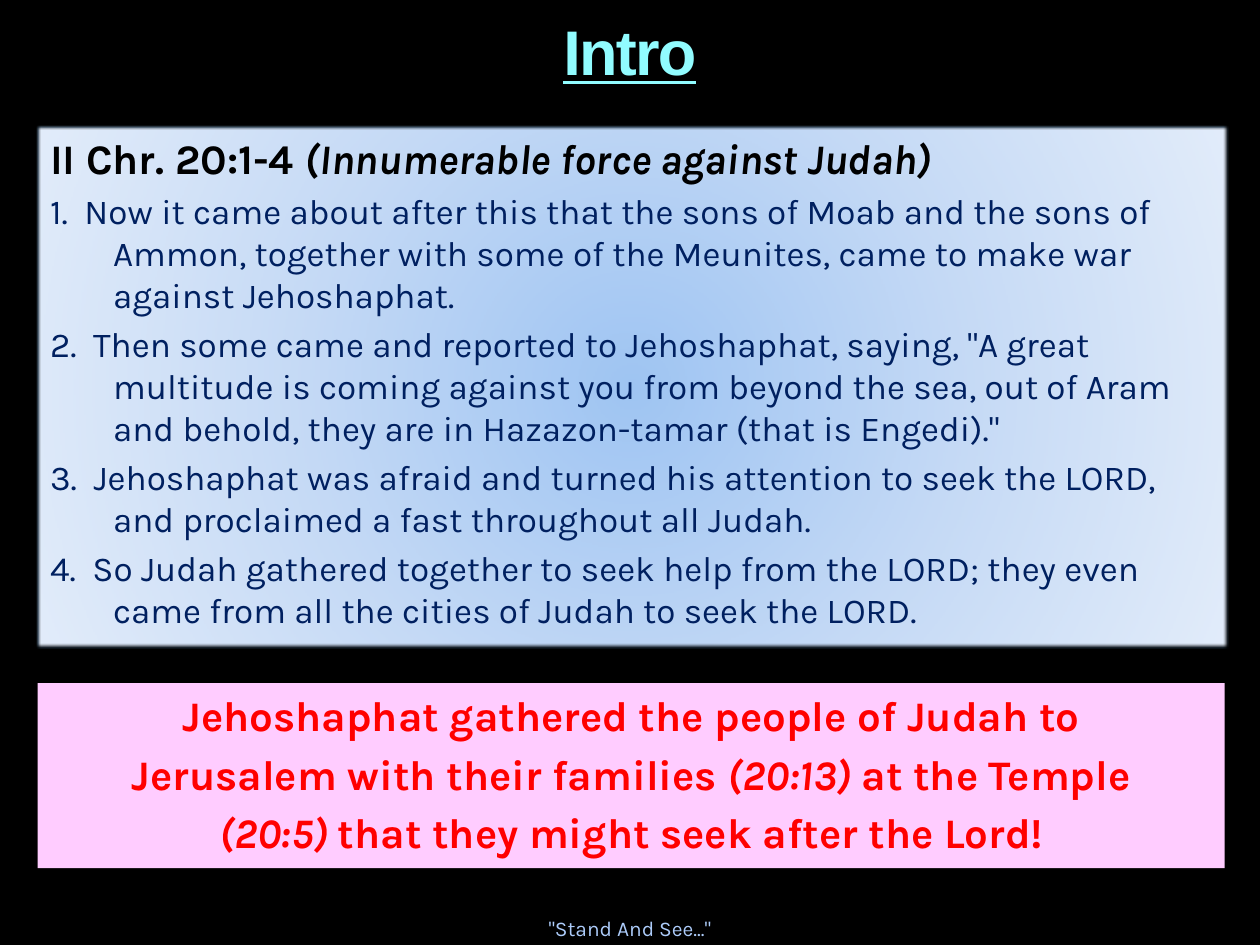
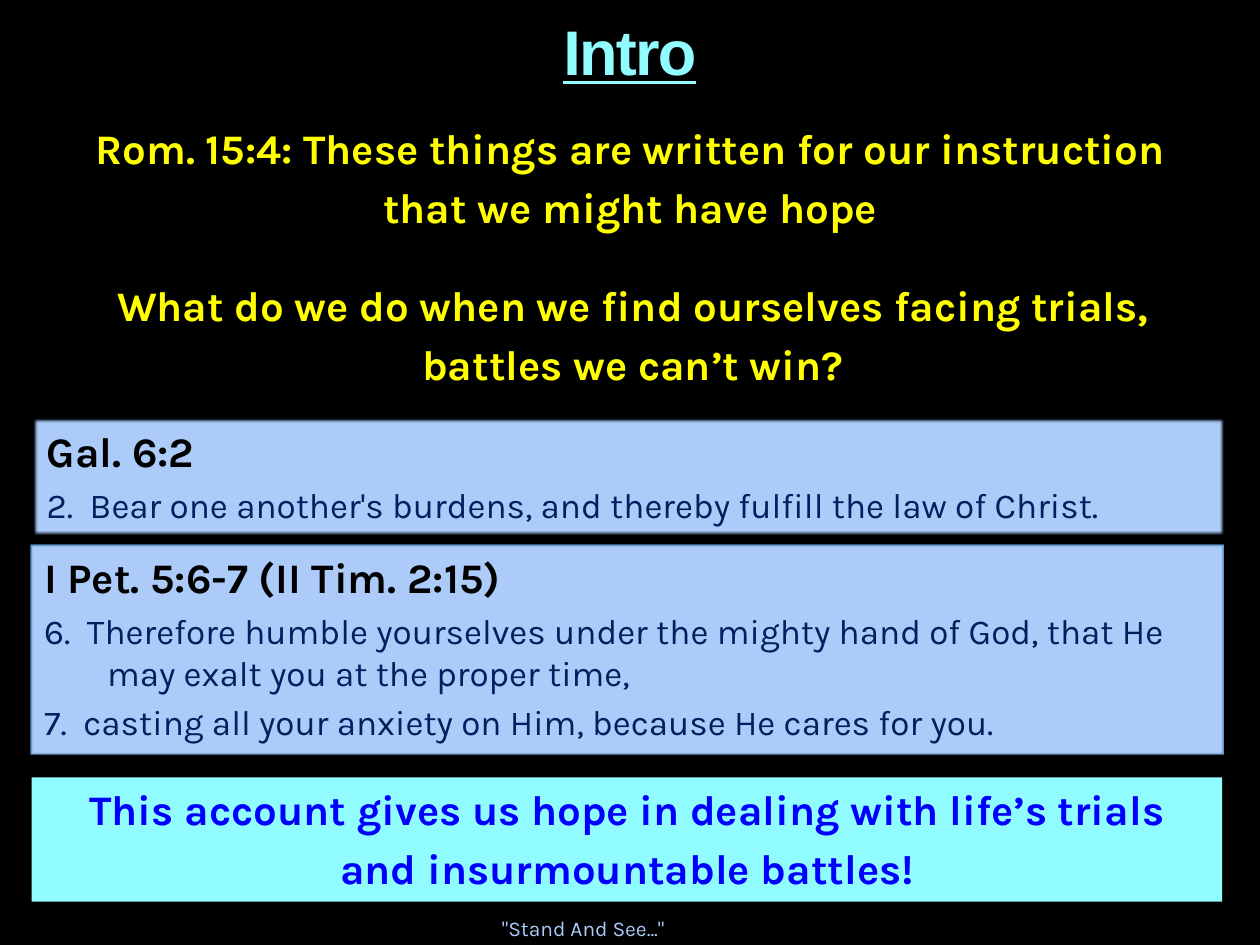
from dataclasses import dataclass

from lxml.etree import SubElement
from pptx import Presentation
from pptx.dml.color import RGBColor
from pptx.enum.shapes import MSO_SHAPE as ShapeKind
from pptx.enum.text import MSO_ANCHOR as Anchor
from pptx.enum.text import MSO_AUTO_SIZE as AutoSize
from pptx.enum.text import PP_ALIGN as Align
from pptx.oxml import parse_xml
from pptx.oxml.ns import nsdecls, qn
from pptx.slide import Slide
from pptx.util import Cm, Pt

BODY_FONT = "Karla"
TITLE_FONT = "Arial"
BLACK = "000000"
NAVY = "002060"
YELLOW = "FFFF00"
RED = "FF0000"
BLUE = "0000FF"
PINK = "FFCCFF"
AQUA = "91FCFF"
PERIWINKLE = "ACCBF9"
PANEL_LINE = "629DD1"
GLOW_STOPS = ((0, "9EC4F2"), (50, "C4D9F5"), (100, "E2ECFA"))
HANGING = Cm(1.27)
SOFT_EDGE = Pt(1)


@dataclass(frozen=True)
class Box:
    left: float
    top: float
    width: float
    height: float

    def lengths(self) -> tuple:
        return Cm(self.left), Cm(self.top), Cm(self.width), Cm(self.height)


@dataclass(frozen=True)
class Span:
    text: str
    italic: bool = False


@dataclass(frozen=True)
class Scripture:
    box: Box
    heading: tuple[Span, ...]
    verses: tuple[str, ...]
    glowing: bool = False


@dataclass(frozen=True)
class Statement:
    box: Box
    lines: tuple[tuple[Span, ...], ...]
    text_color: str
    fill: str | None = None


def rgb(color: str) -> RGBColor:
    return RGBColor.from_string(color)


def style_run(run, size: float, color: str, bold: bool = False,
              font: str = BODY_FONT) -> None:
    run.font.name = font
    run.font.size = Pt(size)
    run.font.bold = bold
    run.font.color.rgb = rgb(color)


def add_label(slide: Slide, box: Box, text: str, anchor: Anchor):
    text_frame = slide.shapes.add_textbox(*box.lengths()).text_frame
    text_frame.text = text
    text_frame.word_wrap = True
    text_frame.vertical_anchor = anchor
    paragraph = text_frame.paragraphs[0]
    paragraph.alignment = Align.CENTER
    return paragraph.runs[0]


def add_title(slide: Slide, text: str) -> None:
    run = add_label(slide, Box(0, 0, 25.4, 1.9), text, Anchor.BOTTOM)
    style_run(run, 36, AQUA, True, TITLE_FONT)
    run.font.underline = True
    run.font._element.set("spc", "-100")


def add_footer(slide: Slide, left: float) -> None:
    run = add_label(slide, Box(left, 18.42, 9.96, 0.6),
                    '"Stand And See..."', Anchor.MIDDLE)
    style_run(run, 12, PERIWINKLE)


def add_rectangle(slide: Slide, box: Box, fill: str):
    shape = slide.shapes.add_shape(ShapeKind.RECTANGLE, *box.lengths())
    shape.shadow.inherit = False
    shape.fill.solid()
    shape.fill.fore_color.rgb = rgb(fill)
    shape.line.fill.background()
    return shape


def prepare_text(shape):
    text_frame = shape.text_frame
    text_frame.word_wrap = True
    text_frame.vertical_anchor = Anchor.TOP
    text_frame.auto_size = AutoSize.SHAPE_TO_FIT_TEXT
    return text_frame


def fill_paragraph(text_frame, index: int, spans: tuple[Span, ...], size: float,
                   color: str, bold: bool, alignment: Align) -> None:
    paragraph = text_frame.add_paragraph() if index else text_frame.paragraphs[0]
    paragraph.alignment = alignment
    paragraph.space_before = Pt(size * 0.2)
    properties = paragraph._p.get_or_add_pPr()
    properties.set("marL", str(HANGING))
    properties.set("indent", str(-HANGING))
    for span in spans:
        run = paragraph.add_run()
        run.text = span.text
        style_run(run, size, color, bold)
        run.font.italic = span.italic


def soften_edges(shape) -> None:
    effects = shape._element.spPr.find(qn("a:effectLst"))
    SubElement(effects, qn("a:softEdge"), rad=str(SOFT_EDGE))


def apply_glow(shape) -> None:
    stops = "".join(
        f'<a:gs pos="{position * 1000}"><a:srgbClr val="{color}"/></a:gs>'
        for position, color in GLOW_STOPS
    )
    gradient = parse_xml(
        f'<a:gradFill {nsdecls("a")} rotWithShape="1"><a:gsLst>{stops}</a:gsLst>'
        '<a:path path="circle"><a:fillToRect l="50000" t="50000" r="50000" '
        'b="50000"/></a:path></a:gradFill>'
    )
    properties = shape._element.spPr
    properties.replace(properties.find(qn("a:solidFill")), gradient)


def add_scripture(slide: Slide, scripture: Scripture) -> None:
    shape = add_rectangle(slide, scripture.box, PERIWINKLE)
    shape.line.color.rgb = rgb(PANEL_LINE)
    shape.line.width = Pt(1)
    soften_edges(shape)
    if scripture.glowing:
        apply_glow(shape)
    text_frame = prepare_text(shape)
    fill_paragraph(text_frame, 0, scripture.heading, 24, BLACK, True, Align.LEFT)
    for index, verse in enumerate(scripture.verses, 1):
        fill_paragraph(text_frame, index, (Span(verse),), 20, NAVY, False, Align.LEFT)


def add_statement(slide: Slide, statement: Statement) -> None:
    if statement.fill:
        shape = add_rectangle(slide, statement.box, statement.fill)
    else:
        shape = slide.shapes.add_textbox(*statement.box.lengths())
    text_frame = prepare_text(shape)
    for index, spans in enumerate(statement.lines):
        fill_paragraph(text_frame, index, spans, 24, statement.text_color, True,
                       Align.CENTER)


def add_intro_slide(presentation, footer_left: float,
                    scriptures: tuple[Scripture, ...],
                    statements: tuple[Statement, ...]) -> None:
    slide = presentation.slides.add_slide(presentation.slide_layouts[6])
    slide.background.fill.solid()
    slide.background.fill.fore_color.rgb = rgb(BLACK)
    add_footer(slide, footer_left)
    add_title(slide, "Intro")
    for statement in statements:
        add_statement(slide, statement)
    for scripture in scriptures:
        add_scripture(slide, scripture)


JUDAH_THREATENED = Scripture(
    Box(0.76, 2.54, 24, 10.52),
    (Span("II Chr. 20:1-4 "), Span("(Innumerable force against Judah)", True)),
    (
        "1.  Now it came about after this that the sons of Moab and the sons of "
        "Ammon, together with some of the Meunites, came to make war against "
        "Jehoshaphat.",
        "2.  Then some came and reported to Jehoshaphat, saying, \"A great "
        "multitude is coming against you from beyond the sea, out of Aram and "
        "behold, they are in Hazazon-tamar (that is Engedi).\"",
        "3.  Jehoshaphat was afraid and turned his attention to seek the LORD, "
        "and proclaimed a fast throughout all Judah.",
        "4.  So Judah gathered together to seek help from the LORD; they even "
        "came from all the cities of Judah to seek the LORD.",
    ),
    glowing=True,
)
PEOPLE_GATHERED = Statement(
    Box(0.76, 13.77, 23.93, 3.73),
    (
        (Span("Jehoshaphat gathered the people of Judah to"),),
        (Span("Jerusalem with their families "), Span("(20:13) ", True),
         Span("at the Temple")),
        (Span("(20:5) ", True), Span("that they might seek after the Lord!")),
    ),
    RED,
    PINK,
)
BEAR_BURDENS = Scripture(
    Box(0.69, 8.46, 23.95, 2.31),
    (Span("Gal. 6:2"),),
    ("2.  Bear one another's burdens, and thereby fulfill the law of Christ.",),
)
CAST_ANXIETY = Scripture(
    Box(0.64, 11, 24, 4.19),
    (Span("I Pet. 5:6-7 (II Tim. 2:15)"),),
    (
        "6.  Therefore humble yourselves under the mighty hand of God, that He "
        "may exalt you at the proper time,",
        "7.  casting all your anxiety on Him, because He cares for you.",
    ),
)
HOPE_IN_TRIALS = Statement(
    Box(0.64, 15.67, 24, 2.51),
    (
        (Span("This account gives us hope in dealing with life’s trials"),),
        (Span("and insurmountable battles!"),),
    ),
    BLUE,
    AQUA,
)
WRITTEN_FOR_HOPE = Statement(
    Box(0.64, 2.34, 24.13, 2.51),
    (
        (Span("Rom. 15:4: These things are written for our instruction"),),
        (Span("that we might have hope"),),
    ),
    YELLOW,
)
FACING_TRIALS = Statement(
    Box(0.69, 5.51, 24.13, 2.51),
    (
        (Span("What do we do when we find ourselves facing trials,"),),
        (Span("battles we can’t win?"),),
    ),
    YELLOW,
)


def main() -> None:
    presentation = Presentation()
    presentation.slide_width = Cm(25.4)
    presentation.slide_height = Cm(19.05)
    add_intro_slide(presentation, 7.72, (JUDAH_THREATENED,), (PEOPLE_GATHERED,))
    add_intro_slide(presentation, 6.78, (BEAR_BURDENS, CAST_ANXIETY),
                    (HOPE_IN_TRIALS, WRITTEN_FOR_HOPE, FACING_TRIALS))
    presentation.save("out.pptx")


if __name__ == "__main__":
    main()
